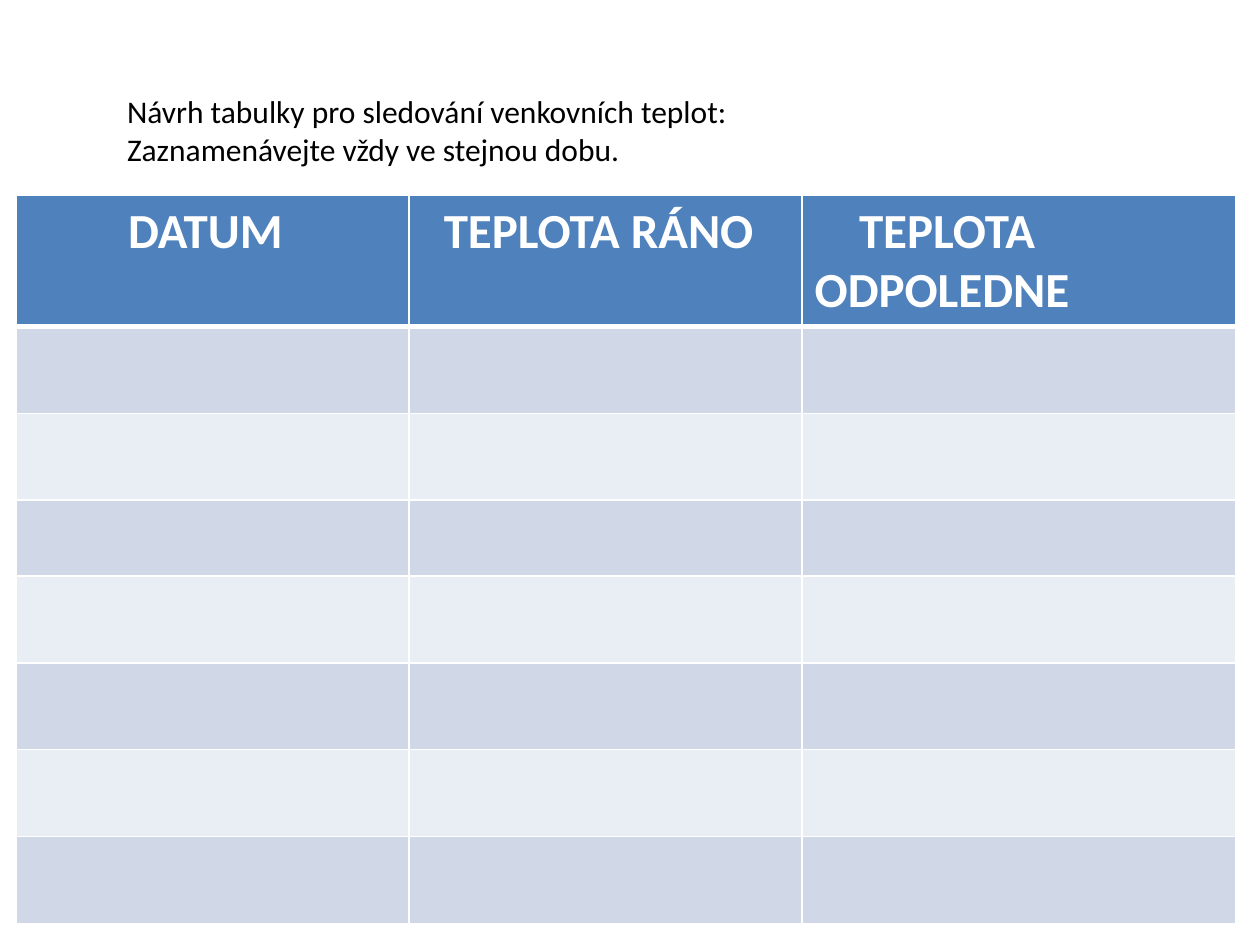
from lxml.etree import SubElement
from pptx import Presentation
from pptx.dml.color import RGBColor
from pptx.oxml.ns import qn
from pptx.util import Pt


def style(font, size, color, bold=False):
    font.name, font.size, font.bold = "Calibri", Pt(size), bold
    font.color.rgb = RGBColor.from_string(color)


def border(cell, side, width):
    """Draw a white line on one side (L, R, T or B); call before filling."""
    line = SubElement(cell._tc.get_or_add_tcPr(), qn(f"a:ln{side}"), w=str(Pt(width)))
    fill = SubElement(line, qn("a:solidFill"))
    SubElement(fill, qn("a:srgbClr"), val="FFFFFF")


deck = Presentation()
deck.slide_width, deck.slide_height = Pt(720), Pt(540)
slide = deck.slides.add_slide(deck.slide_layouts[6])

# Introduction
intro = slide.shapes.add_textbox(Pt(65.5), Pt(49), Pt(361.5), Pt(51)).text_frame
intro.word_wrap = False
intro.text = ("Návrh tabulky pro sledování venkovních teplot:\n"
              "Zaznamenávejte vždy ve stejnou dobu.")
for para in intro.paragraphs:
    style(para.font, 18, "000000")

# Temperature table
widths = [224.7, 224.7, 248]
heights = [75, 49.7, 49.7, 43.2] + [49.7] * 4
frame = slide.shapes.add_table(len(heights), len(widths), Pt(9), Pt(111.5),
                               Pt(sum(widths)), Pt(sum(heights)))
table = frame.table
for col, width in zip(table.columns, widths):
    col.width = Pt(width)

for r, (row, height) in enumerate(zip(table.rows, heights)):
    row.height = Pt(height)
    color = "4F81BD" if r == 0 else ("E9EDF4", "D0D8E8")[r % 2]
    for cell in row.cells:
        for side in "LRTB":
            heavy = (r, side) in ((0, "B"), (1, "T"))
            border(cell, side, 3 if heavy else 1)
        cell.fill.solid()
        cell.fill.fore_color.rgb = RGBColor.from_string(color)

# Headings, each with its own first-line indent
heads = [("DATUM", 57), ("TEPLOTA RÁNO", 12.7), ("TEPLOTA ODPOLEDNE", 25.3)]
for cell, (text, indent) in zip(table.rows[0].cells, heads):
    cell.text = text
    para = cell.text_frame.paragraphs[0]
    style(para.font, 28, "FFFFFF", True)
    props = para._p.get_or_add_pPr()
    props.set("marL", "0")
    props.set("indent", str(Pt(indent)))

deck.save("out.pptx")
